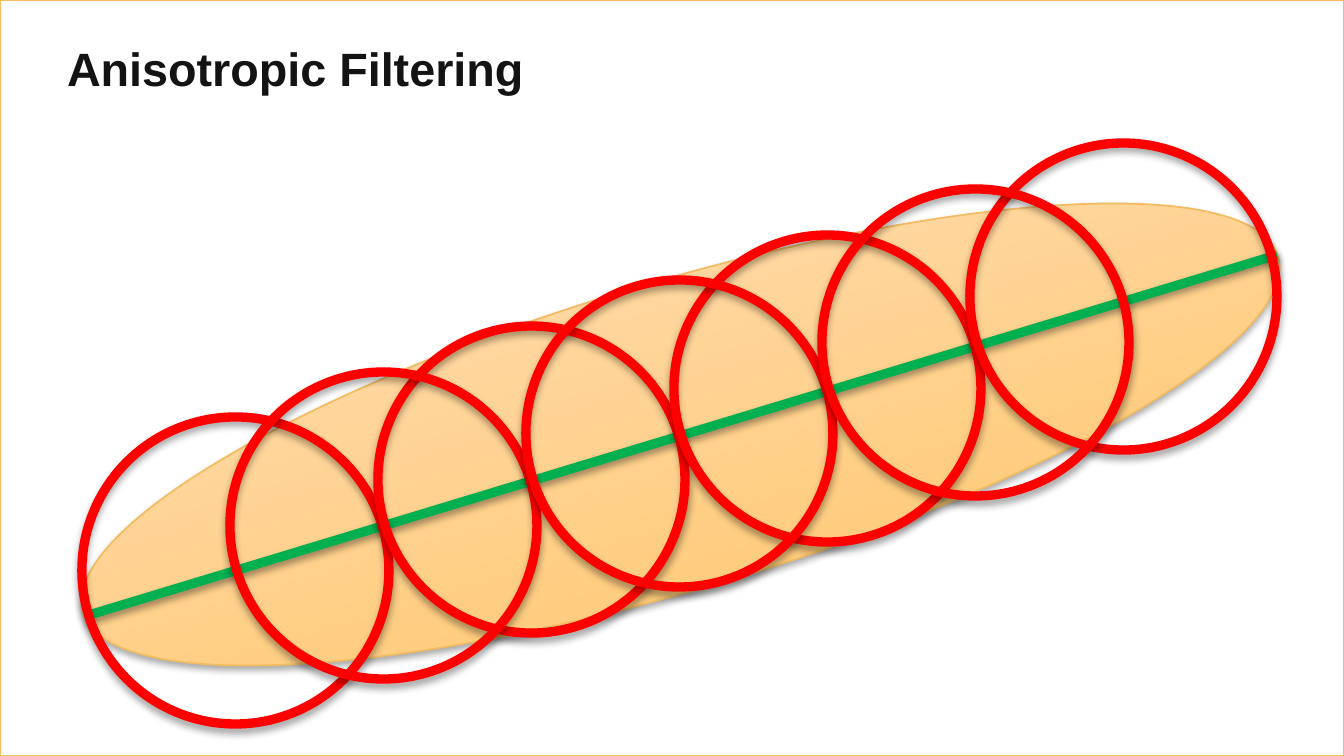
"""Build the Anisotropic Filtering slide: a tilted footprint sampled by circles."""
from lxml import etree
from pptx import Presentation
from pptx.dml.color import RGBColor
from pptx.enum.shapes import MSO_CONNECTOR, MSO_SHAPE
from pptx.oxml.ns import qn
from pptx.util import Emu, Pt

RECTANGLE, OVAL = MSO_SHAPE.RECTANGLE, MSO_SHAPE.OVAL
STRAIGHT = MSO_CONNECTOR.STRAIGHT
PX = 914400 / 168
TILT = 343.4


def px(*lengths):
    return [Emu(round(length * PX)) for length in lengths]


def style(item, color, width, distance=23000, opacity=35000):
    item.line.color.rgb = RGBColor.from_string(color)
    item.line.width = Pt(width)
    effects = etree.SubElement(item._element.spPr, qn("a:effectLst"))
    shadow = etree.SubElement(effects, qn("a:outerShdw"), blurRad="40000",
                              dist=str(distance), dir="5400000", rotWithShape="0")
    black = etree.SubElement(shadow, qn("a:srgbClr"), val="000000")
    etree.SubElement(black, qn("a:alpha"), val=str(opacity))


deck = Presentation()
deck.slide_width, deck.slide_height = px(1344, 756)
page = deck.slides.add_slide(deck.slide_layouts[6])
shapes = page.shapes

frame = shapes.add_shape(RECTANGLE, *px(0, 0, 1344, 756))
frame.fill.solid()
frame.fill.fore_color.rgb = RGBColor.from_string("FFFFFF")
style(frame, "F3BC60", 0.75)

title = shapes.add_textbox(*px(54, 33, 1166, 71))
box = title.text_frame
box.word_wrap = True
box.margin_left, box.margin_top, box.margin_right, box.margin_bottom = px(13, 7, 13, 7)
span = box.paragraphs[0].add_run()
span.text = "Anisotropic Filtering"
span.font.name = "Arial"
span.font.size = Pt(20)
span.font.bold = True
span.font.color.rgb = RGBColor.from_string("141313")

footprint = shapes.add_shape(OVAL, *px(57, 281, 1247, 307))
footprint.rotation = TILT
footprint.fill.gradient()
footprint.fill.gradient_angle = 90
for stop, color in zip(footprint.fill.gradient_stops, ("FFC15C", "FFE2C1")):
    stop.color.rgb = RGBColor.from_string(color)
style(footprint, "F3BC60", 0.75)

axis = shapes.add_connector(STRAIGHT, *px(89, 615, 1277, 255))
style(axis, "00B050", 4, 20000, 38000)

for step in (0, 2, 4, 6, 1, 3, 5):
    sample = shapes.add_shape(OVAL, *px(82 + 148 * step, 417 - 137 * step // 3, 307, 307))
    sample.rotation = TILT
    sample.fill.background()
    style(sample, "FF0000", 4)

deck.save("out.pptx")
